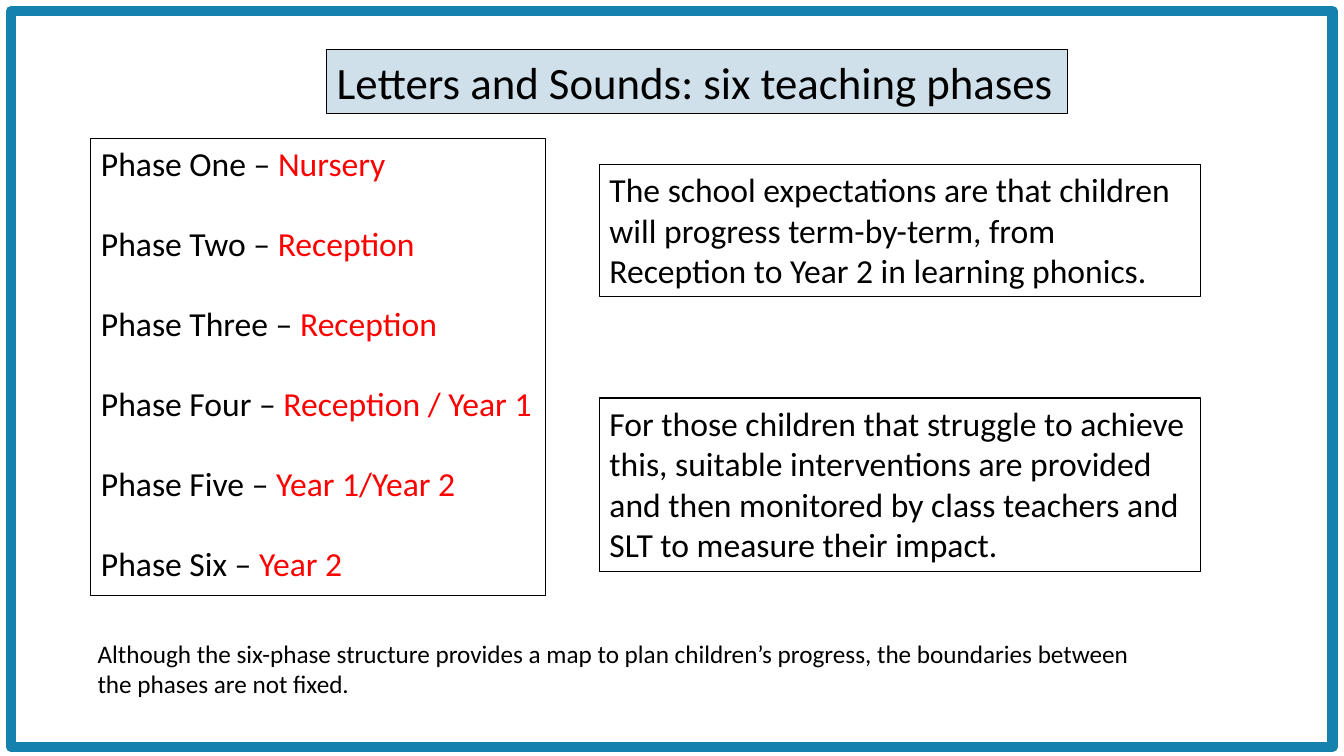
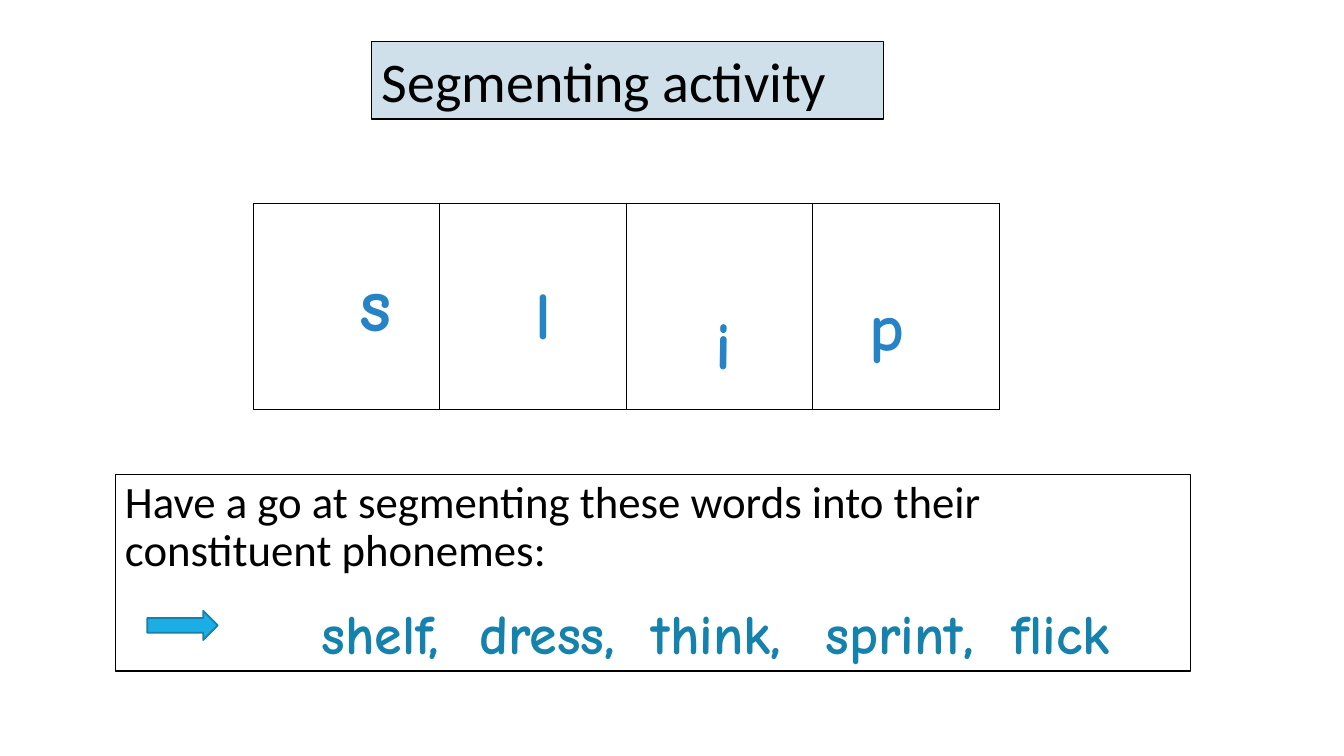
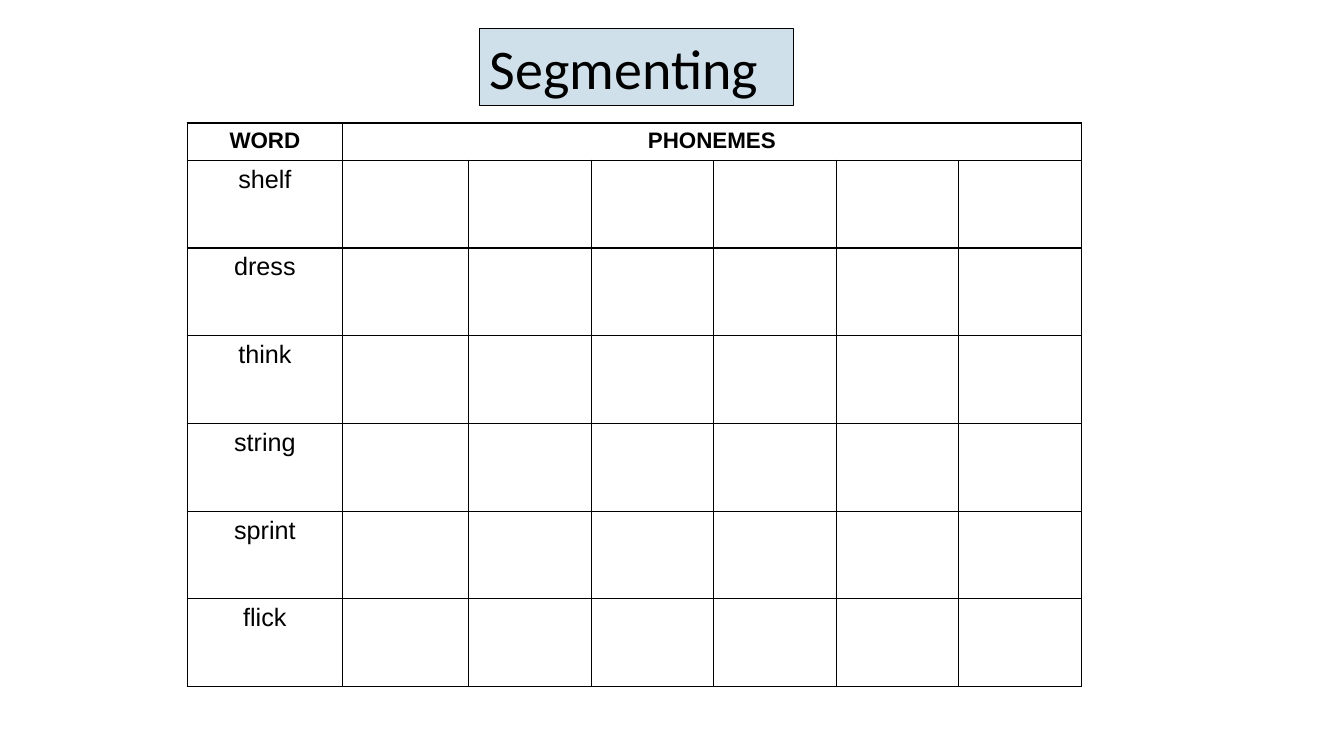
from dataclasses import dataclass

from pptx import Presentation
from pptx.dml.color import RGBColor
from pptx.enum.shapes import MSO_SHAPE
from pptx.enum.text import MSO_ANCHOR, MSO_AUTO_SIZE, PP_ALIGN
from pptx.oxml import parse_xml
from pptx.oxml.ns import nsdecls
from pptx.util import Cm, Pt


@dataclass(frozen=True)
class Theme:
    ink: str = "000000"
    red: str = "FF0000"
    pale: str = "CFE0EA"
    frame: str = "1482AC"
    letter: str = "2683C6"
    arrow: str = "1CADE4"
    edge: str = "1580A9"
    sans: str = "Calibri"
    comic: str = "Comic Neue"
    grid: str = "Arial"
    note: int = 18
    head: int = 16
    body: int = 24
    task: int = 32
    word: int = 40
    spell: int = 48
    thin: float = 0.75


T = Theme()

# Boxes are left, top, width, height in centimetres.
TITLES = [
    ("Letters and Sounds: six teaching phases", 32, (8.23, 1.24, 18.67, 1.63)),
    ("Segmenting activity", 40, (9.37, 1.04, 12.9, 1.96)),
    ("Segmenting", 40, (12.09, 0.71, 7.9, 1.96)),
]
PHASES = [
    ("Phase One – ", "Nursery"),
    ("Phase Two – ", "Reception"),
    ("Phase Three – ", "Reception"),
    ("Phase Four – ", "Reception / Year 1"),
    ("Phase Five – ", "Year 1/Year 2"),
    ("Phase Six – ", "Year 2"),
]
AIMS = [
    ("The school expectations are that children will progress term-by-term, "
     "from Reception to Year 2 in learning phonics.", (15.11, 4.14, 15.14, 3.33)),
    ("For those children that struggle to achieve this, suitable interventions "
     "are provided and then monitored by class teachers and SLT to measure "
     "their impact.", (15.11, 10.03, 15.14, 4.37)),
]
NOTE = ("Although the six-phase structure provides a map to plan children’s "
        "progress, the boundaries between the phases are not fixed.")
# Letter, size, left inset, top inset
FIXED = [("s", 54, 2.67, 1.52), ("l", T.spell, 2.41, 1.9)]
LOOSE = [("i", (16.15, 6.48, 4.27, 3.3), 1.88, 1.14),
         ("p", (21.67, 6.88, 2.84, 2.31), 0.25, 0.28)]
TASK = "Have a go at segmenting these words into their constituent phonemes:"
TRY = ["shelf,", "dress,", "think,", "sprint,", "flick"]
STOPS = [4.95, 8.94, 13.28, 17.65, 22.35]
HEADS = ["WORD", "PHONEMES"]
WORDS = ["shelf", "dress", "think", "string", "sprint", "flick"]
SLOTS = 6


def rgb(code):
    return RGBColor.from_string(code)


def place(shape, box):
    shape.left, shape.top, shape.width, shape.height = map(Cm, box)


def paint(shape, fill=None, line=None, width=T.thin):
    if fill:
        shape.fill.solid()
        shape.fill.fore_color.rgb = rgb(fill)
    else:
        shape.fill.background()
    if line:
        shape.line.color.rgb = rgb(line)
        shape.line.width = Pt(width)


def write(para, text, size, color=T.ink, face=T.sans, bold=False):
    run = para.add_run()
    run.text = text
    font = run.font
    font.size, font.name, font.bold = Pt(size), face, bold
    font.color.rgb = rgb(color)


def settle(frame):
    frame.word_wrap = True
    frame.auto_size = MSO_AUTO_SIZE.NONE
    frame.vertical_anchor = MSO_ANCHOR.TOP


def box_of(slide, box, line=None):
    shape = slide.shapes.add_textbox(*map(Cm, box))
    paint(shape, line=line)
    settle(shape.text_frame)
    return shape.text_frame


def inset(part, left, top):
    part.margin_left, part.margin_top = Cm(left), Cm(top)


def start(deck, layout, index):
    """Add a slide with its shaded title."""
    text, size, box = TITLES[index]
    slide = deck.slides.add_slide(deck.slide_layouts[layout])
    title = slide.shapes.title
    place(title, box)
    paint(title, T.pale, T.ink)
    settle(title.text_frame)
    para = title.text_frame.paragraphs[0]
    para.alignment = PP_ALIGN.LEFT
    write(para, text, size)
    return slide


def grid(slide, box, rows, cols):
    """Add a plain table with thin black borders."""
    table = slide.shapes.add_table(rows, cols, *map(Cm, box)).table
    table.first_row = table.horz_banding = False
    for cell in table.iter_cells():
        props = cell._tc.get_or_add_tcPr()
        for side in "LRTB":
            props.append(parse_xml(
                f'<a:ln{side} {nsdecls("a")} w="12700"><a:solidFill>'
                f'<a:srgbClr val="{T.ink}"/></a:solidFill></a:ln{side}>'))
        cell.fill.background()
    return table


def phases(deck):
    slide = start(deck, 1, 0)
    body = slide.placeholders[1]
    place(body, (2.29, 3.48, 11.46, 11.53))
    paint(body, line=T.ink)
    frame = body.text_frame
    settle(frame)
    for n, (phase, year) in enumerate(PHASES):
        para = frame.add_paragraph() if n else frame.paragraphs[0]
        props = para._p.get_or_add_pPr()
        props.set("marL", "0")
        props.set("indent", "0")
        props.append(parse_xml(f'<a:buNone {nsdecls("a")}/>'))
        para.space_before = Pt(28.3 if n else 0)
        write(para, phase, T.body)
        write(para, year, T.body, T.red)
    for text, box in AIMS:
        write(box_of(slide, box, T.ink).paragraphs[0], text, T.body)
    note = box_of(slide, (2.21, 15.95, 26.67, 1.8))
    write(note.paragraphs[0], NOTE, T.note)
    border = slide.shapes.add_shape(
        MSO_SHAPE.RECTANGLE, *map(Cm, (0.28, 0.28, 33.3, 18.54)))
    border.shadow.inherit = False
    paint(border, line=T.frame, width=7.5)


def activity(deck):
    slide = start(deck, 5, 1)
    table = grid(slide, (6.38, 5.13, 18.8, 5.18), 1, len(FIXED + LOOSE))
    for n, (text, size, left, top) in enumerate(FIXED):
        cell = table.cell(0, n)
        inset(cell, left, top)
        write(cell.text_frame.paragraphs[0], text, size, T.letter, T.comic, True)
    for text, box, left, top in LOOSE:
        frame = box_of(slide, box)
        inset(frame, left, top)
        write(frame.paragraphs[0], text, T.spell, T.letter, T.comic, True)

    frame = box_of(slide, (2.9, 11.96, 27.1, 4.95), T.ink)
    lead, words = frame.paragraphs[0], frame.add_paragraph()
    stops = "".join(f'<a:tab pos="{Cm(x)}" algn="l"/>' for x in STOPS)
    words._p.get_or_add_pPr().append(
        parse_xml(f'<a:tabLst {nsdecls("a")}>{stops}</a:tabLst>'))
    lead.line_spacing = words.line_spacing = 0.9
    words.space_before = Pt(21)
    write(lead, TASK, T.task)
    for word in TRY:
        write(words, "\t" + word, T.word, T.frame, T.comic, True)

    arrow = slide.shapes.add_shape(
        MSO_SHAPE.RIGHT_ARROW, *map(Cm, (3.71, 15.39, 1.78, 0.74)))
    arrow.shadow.inherit = False
    paint(arrow, T.arrow, T.edge, 1.25)


def sheet(deck):
    slide = start(deck, 5, 2)
    wide, high, first, second, top = 22.53, 14.2, 3.91, 3.18, 0.94
    table = grid(slide, (4.72, 3.1, wide, high), len(WORDS) + 1, SLOTS + 1)
    rest = (wide - first - second) / (SLOTS - 1)
    for col, width in zip(table.columns, [first, second] + [rest] * (SLOTS - 1)):
        col.width = Cm(width)
    deep = (high - top) / len(WORDS)
    for row, height in zip(table.rows, [top] + [deep] * len(WORDS)):
        row.height = Cm(height)
    table.cell(0, 1).merge(table.cell(0, SLOTS))
    texts = [(0, n, head, T.head, True) for n, head in enumerate(HEADS)]
    texts += [(n, 0, word, T.note, False) for n, word in enumerate(WORDS, 1)]
    for row, col, text, size, bold in texts:
        para = table.cell(row, col).text_frame.paragraphs[0]
        para.alignment = PP_ALIGN.CENTER
        write(para, text, size, face=T.grid, bold=bold)


def main():
    deck = Presentation()
    deck.slide_width, deck.slide_height = Cm(33.87), Cm(19.05)
    for build in (phases, activity, sheet):
        build(deck)
    deck.save("out.pptx")


if __name__ == "__main__":
    main()
